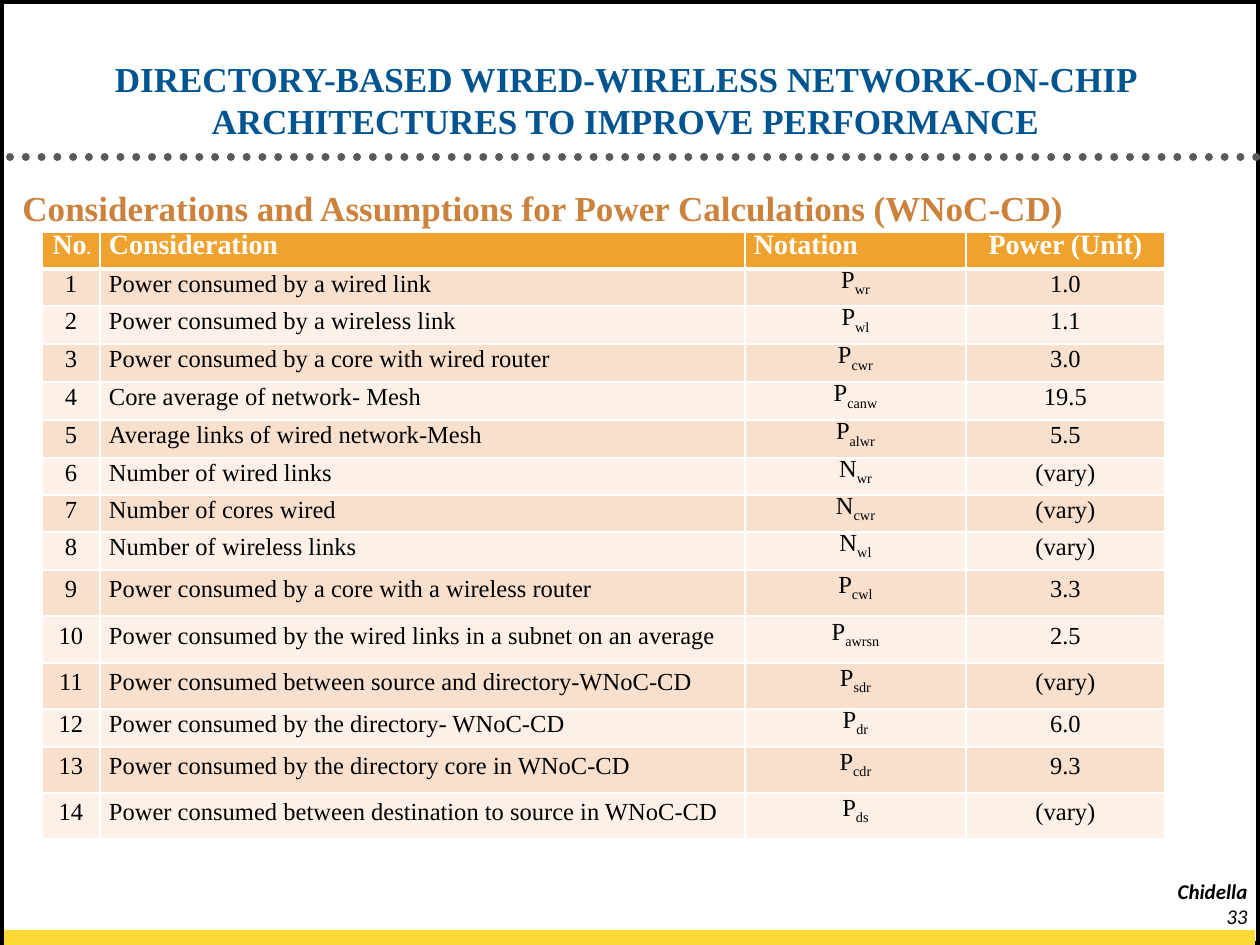
from pptx import Presentation
from pptx.dml.color import RGBColor
from pptx.enum.dml import MSO_LINE
from pptx.enum.shapes import MSO_CONNECTOR, MSO_SHAPE
from pptx.enum.text import MSO_ANCHOR, MSO_AUTO_SIZE, PP_ALIGN as Align
from pptx.oxml import parse_xml
from pptx.oxml.ns import nsdecls
from pptx.util import Pt

PX = 914400 / 126
WHITE = RGBColor(0xFF, 0xFF, 0xFF)
BLACK = RGBColor(0, 0, 0)
GRAY = RGBColor(0x59, 0x59, 0x59)
GOLD = RGBColor(0xFB, 0xD8, 0x33)
BLUE = RGBColor(0x00, 0x54, 0x90)
BROWN = RGBColor(0xCC, 0x82, 0x3D)
HEAD = RGBColor(0xF0, 0xA2, 0x2E)
BANDS = [RGBColor(0xFC, 0xF0, 0xE8), RGBColor(0xF9, 0xE0, 0xCD)]
SERIF = "Times New Roman"


def px(*nums):
    return [round(n * PX) for n in nums]


def put(para, text, color, **form):
    run = para.add_run()
    run.text = text
    run.font.color.rgb = color
    for key, val in form.items():
        setattr(run.font, key, val)
    return run


deck = Presentation()
deck.slide_width, deck.slide_height = px(1260, 945)
slide = deck.slides.add_slide(deck.slide_layouts[5])
shapes = slide.shapes

frame = shapes.add_shape(MSO_SHAPE.RECTANGLE, *px(0, 0, 1260, 945))
frame.line.color.rgb = BLACK
frame.line.width = Pt(4.5)
strip = shapes.add_shape(MSO_SHAPE.RECTANGLE, *px(4, 930, 1251, 15))
strip.line.fill.background()
for shape, color in (frame, WHITE), (strip, GOLD):
    shape.shadow.inherit = False
    shape.fill.solid()
    shape.fill.fore_color.rgb = color

rule = shapes.add_connector(MSO_CONNECTOR.STRAIGHT, *px(10, 157, 1260, 157))
rule.line.color.rgb = GRAY
rule.line.width = Pt(4.5)
rule.line.dash_style = MSO_LINE.ROUND_DOT
rule.line.fill
rule.element.spPr.find(".//{*}ln").set("cap", "rnd")
rule.element.spPr.append(parse_xml(f"<a:effectLst {nsdecls('a')}/>"))

for text, top, bold in ("Chidella", 872, True), ("33", 897, False):
    box = shapes.add_textbox(*px(1144, top, 116, 33))
    box.text_frame.word_wrap = True
    para = box.text_frame.paragraphs[0]
    para.alignment = Align.RIGHT
    put(para, text, BLACK, name="Calibri", size=Pt(12), bold=bold, italic=True)

body = shapes.add_textbox(*px(10, 185, 1230, 687))
body.text_frame.word_wrap = True
para = body.text_frame.paragraphs[0]
form = {"alignment": Align.JUSTIFY, "line_spacing": 0.9, "space_after": Pt(6)}
for key, val in form.items():
    setattr(para, key, val)
put(para, "Considerations and Assumptions for Power Calculations (WNoC-CD)",
    BROWN, name=SERIF, size=Pt(20), bold=True)

title = shapes.title
title.left, title.top, title.width, title.height = px(32, 53, 1187, 95)
form = {"word_wrap": True, "auto_size": MSO_AUTO_SIZE.NONE,
        "vertical_anchor": MSO_ANCHOR.BOTTOM}
for key, val in form.items():
    setattr(title.text_frame, key, val)
para = title.text_frame.paragraphs[0]
para.alignment = Align.CENTER
put(para, "DIRECTORY-BASED WIRED-WIRELESS NETWORK-ON-CHIP "
    "ARCHITECTURES TO IMPROVE PERFORMANCE",
    BLUE, name=SERIF, size=Pt(20), bold=True)
title.element.getparent().append(title.element)

items = [
    ("Power consumed by a wired link", "P", "wr", "1.0"),
    ("Power consumed by a wireless link", "P", "wl", "1.1"),
    ("Power consumed by a core with wired router", "P", "cwr", "3.0"),
    ("Core average of network- Mesh", "P", "canw", "19.5"),
    ("Average links of wired network-Mesh", "P", "alwr", "5.5"),
    ("Number of wired links", "N", "wr", "(vary)"),
    ("Number of cores wired", "N", "cwr", "(vary)"),
    ("Number of wireless links", "N", "wl", "(vary)"),
    ("Power consumed by a core with a wireless router", "P", "cwl", "3.3"),
    ("Power consumed by the wired links in a subnet on an average", "P", "awrsn", "2.5"),
    ("Power consumed between source and directory-WNoC-CD", "P", "sdr", "(vary)"),
    ("Power consumed by the directory- WNoC-CD", "P", "dr", "6.0"),
    ("Power consumed by the directory core in WNoC-CD", "P", "cdr", "9.3"),
    ("Power consumed between destination to source in WNoC-CD", "P", "ds", "(vary)"),
]
rows = [[("No", "."), ("Consideration", ""), ("Notation", ""), ("Power (Unit)", "")]]
for num, (name, sign, sub, power) in enumerate(items, 1):
    rows.append([(str(num), ""), (name, ""), (sign, sub), (power, "")])

wide = px(58, 645, 221, 199)
high = px(37, 37, 38, 38, 38, 38, 37, 37, 38, 46, 47, 46, 38, 46, 46)
table = shapes.add_table(len(rows), 4, *px(42, 232), sum(wide), sum(high)).table
for col, width in zip(table.columns, wide):
    col.width = width
for row, height in zip(table.rows, high):
    row.height = height

tops = [Align.RIGHT, Align.JUSTIFY, Align.LEFT, Align.CENTER]
sides = [Align.CENTER, Align.LEFT, Align.CENTER, Align.CENTER]
inset = px(9)[0]
pad = {"margin_left": inset, "margin_right": inset, "margin_top": 0,
       "margin_bottom": 0, "vertical_anchor": MSO_ANCHOR.MIDDLE}
for r, row in enumerate(rows):
    top = r == 0
    ink = WHITE if top else BLACK
    font = {"name": SERIF, "size": Pt(16 if top else 14), "bold": top}
    for c, (main, tail) in enumerate(row):
        cell = table.cell(r, c)
        for key, val in pad.items():
            setattr(cell, key, val)
        cell.fill.solid()
        cell.fill.fore_color.rgb = HEAD if top else BANDS[r % 2]
        para = cell.text_frame.paragraphs[0]
        para.alignment = (tops if top else sides)[c]
        para.line_spacing = Pt(11.5)
        put(para, main, ink, **font)
        if tail:
            run = put(para, tail, ink, **font)
            if top:
                run.font.size = Pt(10)
            else:
                run._r.get_or_add_rPr().set("baseline", "-25000")
        for i, side in enumerate("LRTB"):
            thick = (r, side) in ((0, "B"), (1, "T"))
            edge = parse_xml(
                f'<a:ln{side} {nsdecls("a")} w="{Pt(3 if thick else 1)}"><a:solidFill>'
                f'<a:srgbClr val="{WHITE}"/></a:solidFill></a:ln{side}>')
            cell._tc.tcPr.insert(i, edge)

deck.save("out.pptx")
